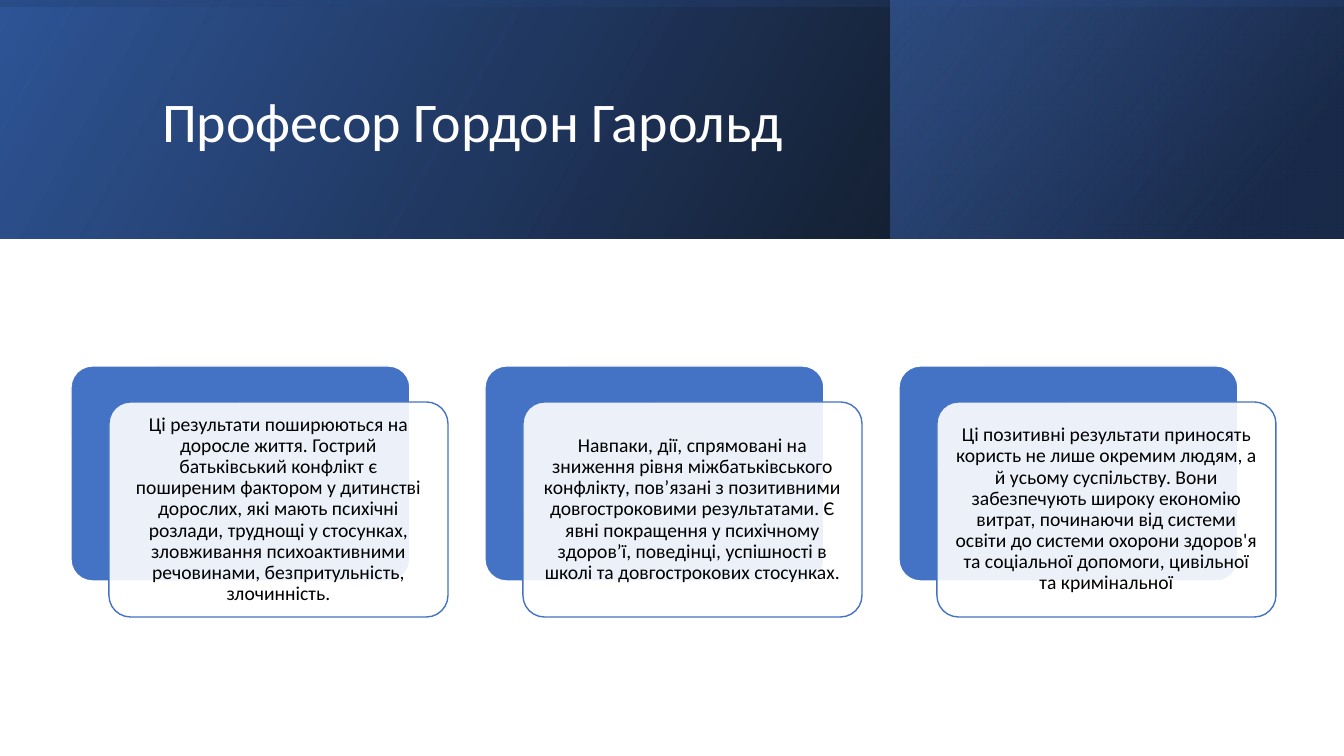
from lxml.etree import SubElement
from pptx import Presentation
from pptx.dml.color import RGBColor
from pptx.enum.shapes import MSO_SHAPE
from pptx.enum.text import MSO_ANCHOR, MSO_AUTO_SIZE, PP_ALIGN
from pptx.oxml.ns import qn
from pptx.util import Pt

TITLE = "Професор Гордон Гарольд"
CARDS = [
    "Ці результати поширюються на доросле життя. Гострий батьківський конфлікт є "
    "поширеним фактором у дитинстві дорослих, які мають психічні розлади, труднощі у "
    "стосунках, зловживання психоактивними речовинами, безпритульність, злочинність.",
    "Навпаки, дії, спрямовані на зниження рівня міжбатьківського конфлікту, пов’язані з "
    "позитивними довгостроковими результатами. Є явні покращення у психічному здоров’ї, "
    "поведінці, успішності в школі та довгострокових стосунках.",
    "Ці позитивні результати приносять користь не лише окремим людям, а й усьому "
    "суспільству. Вони забезпечують широку економію витрат, починаючи від системи освіти "
    "до системи охорони здоров'я та соціальної допомоги, цивільної та кримінальної",
]

WIDTH, HEIGHT, BANNER_HEIGHT = 1344, 756, 239
# Box in px, rotation, gradient angle, stops as (position %, colour, opacity %)
BANNER_LAYERS = [
    ((0, 0, WIDTH, BANNER_HEIGHT), 0, 330, [(0, "000000", 96), (100, "2F5597", 100)]),
    ((891, 0, 452, BANNER_HEIGHT), 0, 320, [(19, "203864", 68), (100, "4472C4", 48)]),
    (((WIDTH - BANNER_HEIGHT) / 2, (BANNER_HEIGHT - WIDTH) / 2, BANNER_HEIGHT, WIDTH),
     270, 350, [(23, "2F5597", 16), (99, "000000", 45)]),
]
TITLE_BOX = (152, 38, 1072, 173)
CARD_LEFT, CARD_TOP, CARD_WIDTH, CARD_HEIGHT = 71, 366, 339, 215
CARD_PITCH, OFFSET_X, OFFSET_Y, CARD_INSET = 414, 38, 36, 12
BLUE, WHITE, BLACK = "4472C4", "FFFFFF", "000000"


def px(length):
    return round(length * 914400 / 100.8)


def colour(value):
    return RGBColor.from_string(value)


def add_panel(slide, kind, box):
    shape = slide.shapes.add_shape(kind, *map(px, box))
    shape.shadow.inherit = False
    return shape


def add_opacity(colour_element, percent):
    SubElement(colour_element, qn("a:alpha"), val=str(percent * 1000))


def add_banner_layer(slide, box, rotation, angle, stops):
    """Add a mirrored rectangle with a translucent linear gradient."""
    shape = add_panel(slide, MSO_SHAPE.RECTANGLE, box)
    shape.rotation = rotation
    shape.line.fill.background()
    shape.fill.gradient()
    properties = shape.element.spPr
    properties.find(qn("a:xfrm")).set("flipH", "1")
    gradient = properties.find(qn("a:gradFill"))
    for child in list(gradient):
        gradient.remove(child)
    stop_list = SubElement(gradient, qn("a:gsLst"))
    for position, value, opacity in stops:
        stop = SubElement(stop_list, qn("a:gs"), pos=str(position * 1000))
        add_opacity(SubElement(stop, qn("a:srgbClr"), val=value), opacity)
    SubElement(gradient, qn("a:lin"), ang=str(angle * 60000), scaled="0")


def add_card_panel(slide, left, top, fill, line):
    shape = add_panel(slide, MSO_SHAPE.ROUNDED_RECTANGLE,
                      (left, top, CARD_WIDTH, CARD_HEIGHT))
    shape.adjustments[0] = 0.1
    shape.fill.solid()
    shape.fill.fore_color.rgb = colour(fill)
    shape.line.color.rgb = colour(line)
    shape.line.width = Pt(1)
    return shape


def set_text(shape, text, size, value, alignment, inset=None):
    frame = shape.text_frame
    frame.text = text
    frame.word_wrap = True
    frame.auto_size = MSO_AUTO_SIZE.NONE
    frame.vertical_anchor = MSO_ANCHOR.MIDDLE
    if inset is not None:
        frame.margin_left = frame.margin_right = px(inset)
        frame.margin_top = frame.margin_bottom = px(inset)
    paragraph = frame.paragraphs[0]
    paragraph.alignment = alignment
    paragraph.line_spacing = 0.9
    paragraph.font.name = "Calibri"
    paragraph.font.size = Pt(size)
    paragraph.font.color.rgb = colour(value)


def add_card(slide, index, text):
    left = CARD_LEFT + index * CARD_PITCH
    add_card_panel(slide, left, CARD_TOP, BLUE, WHITE)
    front = add_card_panel(slide, left + OFFSET_X, CARD_TOP + OFFSET_Y, WHITE, BLUE)
    add_opacity(front.element.spPr.find(qn("a:solidFill"))[0], 90)
    set_text(front, text, 14, BLACK, PP_ALIGN.CENTER, CARD_INSET)


def main():
    presentation = Presentation()
    presentation.slide_width, presentation.slide_height = px(WIDTH), px(HEIGHT)
    slide = presentation.slides.add_slide(presentation.slide_layouts[5])
    for layer in BANNER_LAYERS:
        add_banner_layer(slide, *layer)

    title = slide.shapes.title
    title.left, title.top, title.width, title.height = map(px, TITLE_BOX)
    set_text(title, TITLE, 40, WHITE, PP_ALIGN.LEFT)
    slide.shapes.element.append(title.element)  # bring in front of the banner

    for index, text in enumerate(CARDS):
        add_card(slide, index, text)
    presentation.save("out.pptx")


if __name__ == "__main__":
    main()
